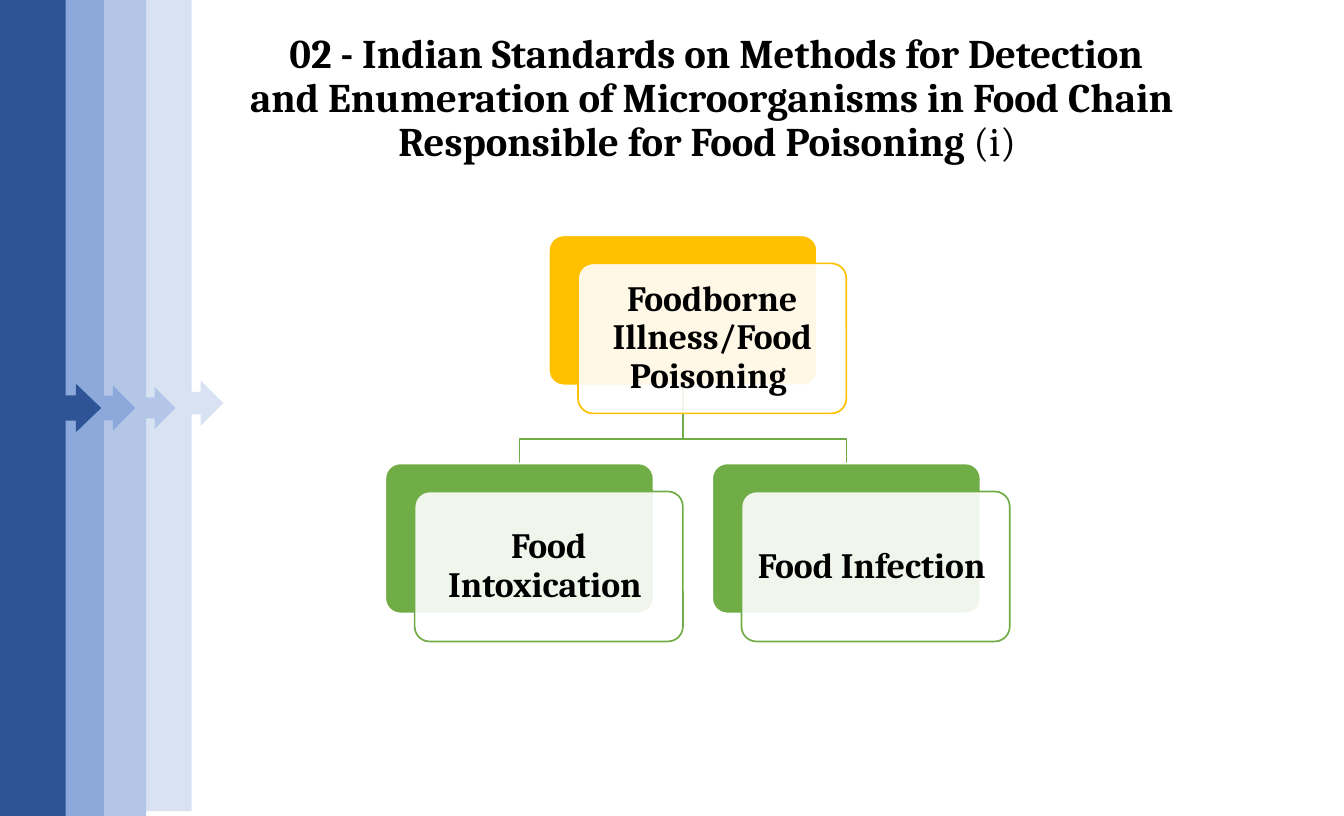
import pptx
import pptx.dml.color
import pptx.enum.shapes
import pptx.enum.text
import pptx.oxml.ns
import pptx.util
from lxml import etree

Inches = pptx.util.Inches
Pt = pptx.util.Pt
RGB = pptx.dml.color.RGBColor.from_string
MSO_SHAPE = pptx.enum.shapes.MSO_SHAPE

THEME = {
    "font": "Cambria", "title": 24, "card": 21, "line": 1,
    "text": "000000", "white": "FFFFFF", "gold": "FFC000", "green": "70AD47",
    "bands": ["D8E2F3", "B3C6E7", "8DA9DB", "2F5496"],
}
W, H = 11.02, 6.69
CARD_W, CARD_H = 2.2, 1.23
OFFSET_X, OFFSET_Y = 0.24, 0.23


def apply(obj, values):
    for name, value in values.items():
        setattr(obj, name, value)


def style(sp, fill=None, line=None, opacity=None):
    sp.shadow.inherit = False
    if fill:
        sp.fill.solid()
        sp.fill.fore_color.rgb = RGB(fill)
    else:
        sp.fill.background()
    if opacity:
        clr = sp.fill._xPr.find(".//" + pptx.oxml.ns.qn("a:srgbClr"))
        etree.SubElement(clr, pptx.oxml.ns.qn("a:alpha"), val=str(opacity * 1000))
    if line:
        sp.line.color.rgb = RGB(line)
        sp.line.width = Pt(THEME["line"])
    else:
        sp.line.fill.background()


def write(sp, runs, size, margin_x, margin_y):
    tf = sp.text_frame
    apply(tf, {
        "word_wrap": True,
        "auto_size": pptx.enum.text.MSO_AUTO_SIZE.NONE,
        "vertical_anchor": pptx.enum.text.MSO_ANCHOR.MIDDLE,
        "margin_left": Inches(margin_x), "margin_right": Inches(margin_x),
        "margin_top": Inches(margin_y), "margin_bottom": Inches(margin_y),
    })
    p = tf.paragraphs[0]
    apply(p, {"alignment": pptx.enum.text.PP_ALIGN.CENTER, "line_spacing": 0.9})
    for text, bold in runs:
        r = p.add_run()
        r.text = text
        apply(r.font, {"name": THEME["font"], "size": Pt(size), "bold": bold})
        r.font.color.rgb = RGB(THEME["text"])


def add_title(s, x, y, w, h):
    sp = s.shapes.title
    apply(sp, {"left": Inches(x), "top": Inches(y),
               "width": Inches(w), "height": Inches(h)})
    write(sp, [
        (" 02 - Indian Standards on Methods for Detection and Enumeration of "
         "Microorganisms in Food Chain Responsible for Food Poisoning ", True),
        ("(i) ", False),
    ], THEME["title"], 0.1, 0.05)


def add_side_bands(s, x, y, h):
    bands = [
        (1.09, -0.04, 0.74, 0.25, 0.25),
        (0.75, 0, 0.69, 0.25, 0.25),
        (0.37, 0, 0.74, 0.272, 0.25),
        (0, 0, 0.83, 0.25, 0.24),
    ]
    for (dx, dy, w, shaft, head), color in zip(bands, THEME["bands"]):
        sp = s.shapes.add_shape(MSO_SHAPE.RIGHT_ARROW_CALLOUT, Inches(x + dx),
                                Inches(y + dy), Inches(w), Inches(h))
        for i, value in enumerate((shaft, head, 0.25, 0.65)):
            sp.adjustments[i] = value
        style(sp, color)


def add_card(s, x, y, text, color):
    layers = [
        (0, 0, {"fill": color, "line": THEME["white"]}),
        (OFFSET_X, OFFSET_Y,
         {"fill": THEME["white"], "line": color, "opacity": 90}),
    ]
    for dx, dy, look in layers:
        sp = s.shapes.add_shape(MSO_SHAPE.ROUNDED_RECTANGLE, Inches(x + dx),
                                Inches(y + dy), Inches(CARD_W), Inches(CARD_H))
        sp.adjustments[0] = 0.1
        style(sp, **look)
    write(sp, [(text, True)], THEME["card"], 0.09, 0.09)


def add_branch(s, start, end):
    (x1, y1), (x2, y2) = start, end
    bend = y2 - 0.2
    fb = s.shapes.build_freeform(Inches(x1), Inches(y1))
    fb.add_line_segments([(Inches(x), Inches(y)) for x, y in
                          [(x1, bend), (x2, bend), (x2, y2)]], close=False)
    style(fb.convert_to_shape(), line=THEME["green"])


def add_hierarchy(s, x, y, w):
    root_x = x + (w - CARD_W) / 2
    child_y = y + 1.87
    children = [(x + w - CARD_W, "Food Infection "), (x, "Food Intoxication ")]
    for child_x, text in children:
        add_branch(s, (root_x + CARD_W / 2, y + CARD_H),
                   (child_x + CARD_W / 2, child_y))
    add_card(s, root_x, y, "Foodborne Illness/Food Poisoning ", THEME["gold"])
    for child_x, text in reversed(children):
        add_card(s, child_x, child_y, text, THEME["green"])


def main():
    prs = pptx.Presentation()
    apply(prs, {"slide_width": Inches(W), "slide_height": Inches(H)})
    s = prs.slides.add_slide(prs.slide_layouts[5])
    add_title(s, 1.9, 0.51, 7.87, 0.61)
    add_side_bands(s, 0, 0, H)
    add_hierarchy(s, 3.16, 1.93, 4.88)
    prs.save("out.pptx")


if __name__ == "__main__":
    main()
